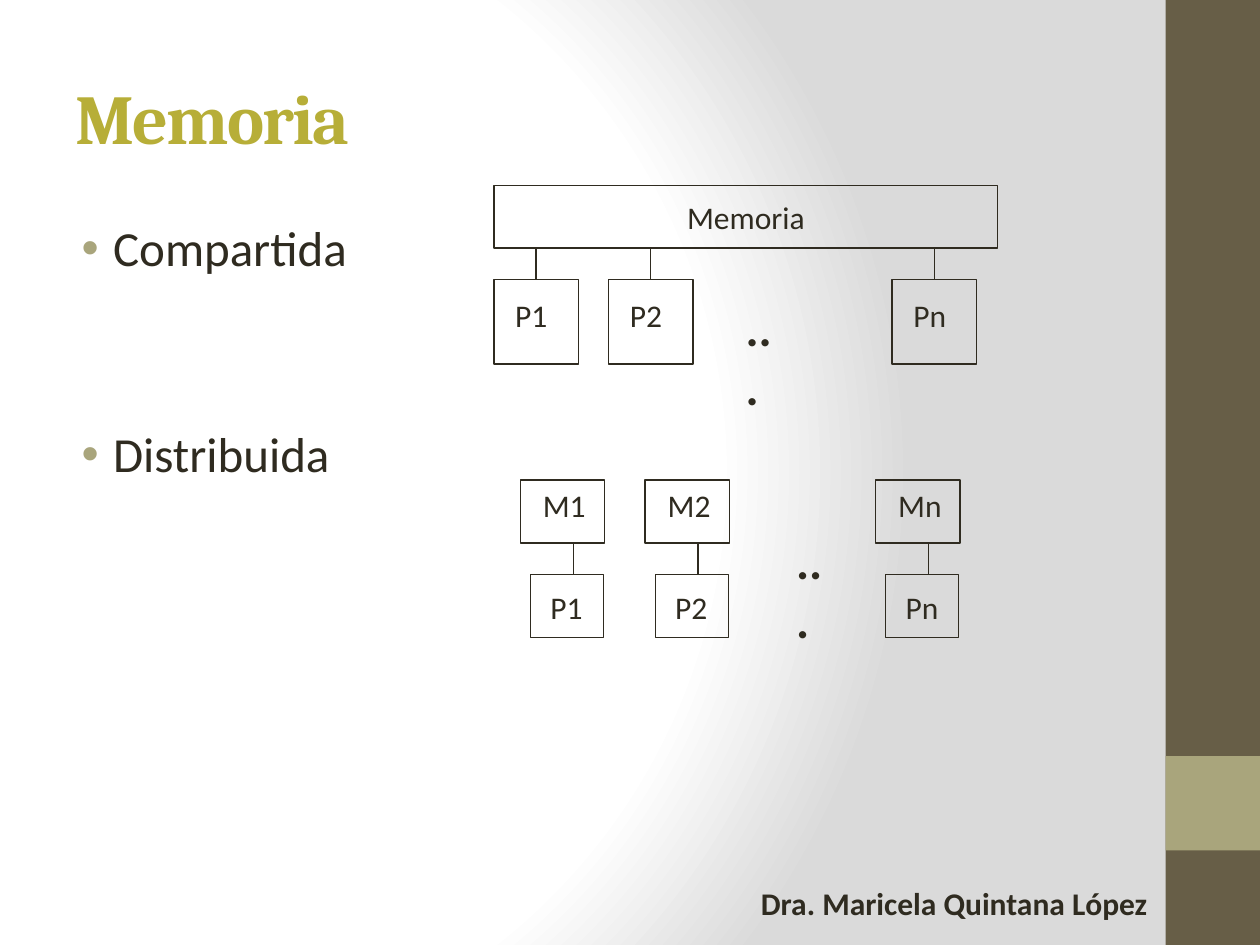
"""Build the slide comparing shared and distributed memory."""
from dataclasses import dataclass
from typing import Any, Optional

import pptx
import pptx.dml.color
import pptx.enum.shapes
import pptx.enum.text
import pptx.oxml
import pptx.oxml.ns
import pptx.util

Inches = pptx.util.Inches
Pt = pptx.util.Pt
Anchor = pptx.enum.text.MSO_ANCHOR
qn = pptx.oxml.ns.qn

COLORS = {
    "ink": "2F2B20",
    "title": "B7AE38",
    "band": "675E47",
    "accent": "A9A57C",
    "center": "FFFFFF",
    "edge": "DADADA",
}


@dataclass(frozen=True)
class Box:
    left: float
    top: float
    width: float
    height: float


@dataclass(frozen=True)
class Style:
    size: float = 18
    bold: bool = False
    color: str = "ink"
    font: str = "Calibri"


@dataclass(frozen=True)
class Node:
    suffix: str
    left: float


LABEL = Style()
DOTS = Style(size=28, bold=True)
BODY = Style(size=28)
TITLE = Style(size=40, bold=True, color="title", font="Cambria")
FOOTER = Style(bold=True)

SHARED = [Node("1", 3.92), Node("2", 4.83), Node("n", 7.08)]
DISTRIBUTED = [Node("1", 4.13), Node("2", 5.12), Node("n", 6.95)]


def rgb(name: str) -> pptx.dml.color.RGBColor:
    """Return a palette colour."""
    return pptx.dml.color.RGBColor.from_string(COLORS[name])


def add_run(paragraph: Any, text: str, style: Style) -> Any:
    """Append a styled run to a paragraph."""
    run = paragraph.add_run()
    run.text = text
    run.font.name = style.font
    run.font.size = Pt(style.size)
    run.font.bold = style.bold
    run.font.color.rgb = rgb(style.color)
    return run


def add_rect(shapes: Any, box: Box, fill: Optional[str] = None) -> Any:
    """Draw a filled rectangle, or an outlined one when no fill is given."""
    rect = shapes.add_shape(
        pptx.enum.shapes.MSO_SHAPE.RECTANGLE, Inches(box.left), Inches(box.top),
        Inches(box.width), Inches(box.height))
    rect.shadow.inherit = False
    if fill:
        rect.fill.solid()
        rect.fill.fore_color.rgb = rgb(fill)
        rect.line.fill.background()
    else:
        rect.fill.background()
        rect.line.color.rgb = rgb("ink")
        rect.line.width = Pt(0.75)
    return rect


def add_frame(shapes: Any, box: Box, anchor: Any = Anchor.TOP) -> Any:
    """Add a wrapping text box and return its text frame."""
    frame = shapes.add_textbox(
        Inches(box.left), Inches(box.top), Inches(box.width), Inches(box.height)).text_frame
    frame.word_wrap = True
    frame.vertical_anchor = anchor
    return frame


def add_text(shapes: Any, box: Box, text: str, style: Style, anchor: Any = Anchor.TOP) -> Any:
    """Add a one-run text box and return the run."""
    return add_run(add_frame(shapes, box, anchor).paragraphs[0], text, style)


def add_link(shapes: Any, x: float, top: float, bottom: float) -> Any:
    """Draw a vertical link without a shadow."""
    link = shapes.add_connector(
        pptx.enum.shapes.MSO_CONNECTOR.STRAIGHT,
        Inches(x), Inches(top), Inches(x), Inches(bottom))
    link.line.color.rgb = rgb("ink")
    link.line.width = Pt(0.75)
    link.element.spPr.append(pptx.oxml.parse_xml(
        f'<a:effectLst {pptx.oxml.ns.nsdecls("a")}/>'))
    return link


def set_background(slide: Any) -> None:
    """Give the slide a radial gradient background."""
    slide.background.fill.solid()
    properties = slide.element.find(".//" + qn("p:bgPr"))
    stops = "".join(
        f'<a:gs pos="{position * 1000}"><a:srgbClr val="{COLORS[name]}"/></a:gs>'
        for position, name in [(0, "center"), (75, "center"), (100, "edge")])
    gradient = pptx.oxml.parse_xml(
        f'<a:gradFill {pptx.oxml.ns.nsdecls("a")} rotWithShape="1"><a:gsLst>{stops}</a:gsLst>'
        '<a:path path="circle"><a:fillToRect l="20000" t="50000" r="100000" b="50000"/>'
        '</a:path></a:gradFill>')
    properties.replace(properties.find(qn("a:solidFill")), gradient)


def add_bullet(paragraph: Any, text: str, space_before: float) -> None:
    """Fill a paragraph as a bulleted item with a hanging indent."""
    paragraph.space_before = Pt(space_before)
    properties = paragraph._p.get_or_add_pPr()
    properties.set("marL", str(Inches(0.38)))
    properties.set("indent", str(Inches(-0.25)))
    declarations = pptx.oxml.ns.nsdecls("a")
    for xml in (
            f'<a:buClr {declarations}><a:srgbClr val="{COLORS["accent"]}"/></a:buClr>',
            f'<a:buFont {declarations} typeface="Arial"/>',
            f'<a:buChar {declarations} char="•"/>'):
        properties.append(pptx.oxml.parse_xml(xml))
    add_run(paragraph, text, BODY)


def draw_shared(shapes: Any) -> None:
    """Draw processors hanging from one common memory."""
    memory = add_rect(shapes, Box(3.92, 1.47, 4, 0.5))
    memory.text_frame.word_wrap = False
    memory.text_frame.vertical_anchor = Anchor.MIDDLE
    paragraph = memory.text_frame.paragraphs[0]
    paragraph.alignment = pptx.enum.text.PP_ALIGN.CENTER
    add_run(paragraph, "Memoria", LABEL)
    for node in SHARED:
        processor = add_rect(shapes, Box(node.left, 2.22, 0.67, 0.67))
        add_text(shapes, Box(node.left + 0.07, 2.3, 0.53, 0.47), f"P{node.suffix}", LABEL)
        link = add_link(shapes, node.left + 0.335, 1.97, 2.22)
        link.end_connect(processor, 0)
    add_text(shapes, Box(5.82, 2.31, 0.5, 0.57), "...", DOTS)


def draw_distributed(shapes: Any) -> None:
    """Draw processors that each own a memory."""
    for node in DISTRIBUTED:
        add_rect(shapes, Box(node.left + 0.08, 4.56, 0.58, 0.5))
        add_text(shapes, Box(node.left + 0.14, 4.62, 0.53, 0.47), f"P{node.suffix}", LABEL)
        add_link(shapes, node.left + 0.42, 4.31, 4.56)
        add_rect(shapes, Box(node.left, 3.81, 0.67, 0.5))
        add_text(shapes, Box(node.left + 0.08, 3.81, 0.61, 0.47), f"M{node.suffix}", LABEL)
    add_text(shapes, Box(6.22, 4.16, 0.5, 0.57), "...", DOTS)


def main() -> None:
    """Build and save the slide."""
    deck = pptx.Presentation()
    deck.slide_width, deck.slide_height = Inches(10), Inches(7.5)
    slide = deck.slides.add_slide(deck.slide_layouts[6])
    set_background(slide)
    add_rect(slide.shapes, Box(9.25, 0, 0.75, 7.5), "band")
    add_rect(slide.shapes, Box(9.25, 6, 0.75, 0.75), "accent")
    add_text(slide.shapes, Box(5.94, 6.97, 3.35, 0.4), "Dra. Maricela Quintana López", FOOTER)
    title = add_text(slide.shapes, Box(0.5, 0.3, 8.33, 1.25), "Memoria", TITLE, Anchor.MIDDLE)
    title.font._element.set("spc", "-100")
    body = add_frame(slide.shapes, Box(0.42, 1.68, 8.33, 5.25))
    add_bullet(body.paragraphs[0], "Compartida", 0)
    add_bullet(body.add_paragraph(), "Distribuida", 84)
    draw_shared(slide.shapes.add_group_shape().shapes)
    draw_distributed(slide.shapes.add_group_shape().shapes)
    deck.save("out.pptx")


if __name__ == "__main__":
    main()
